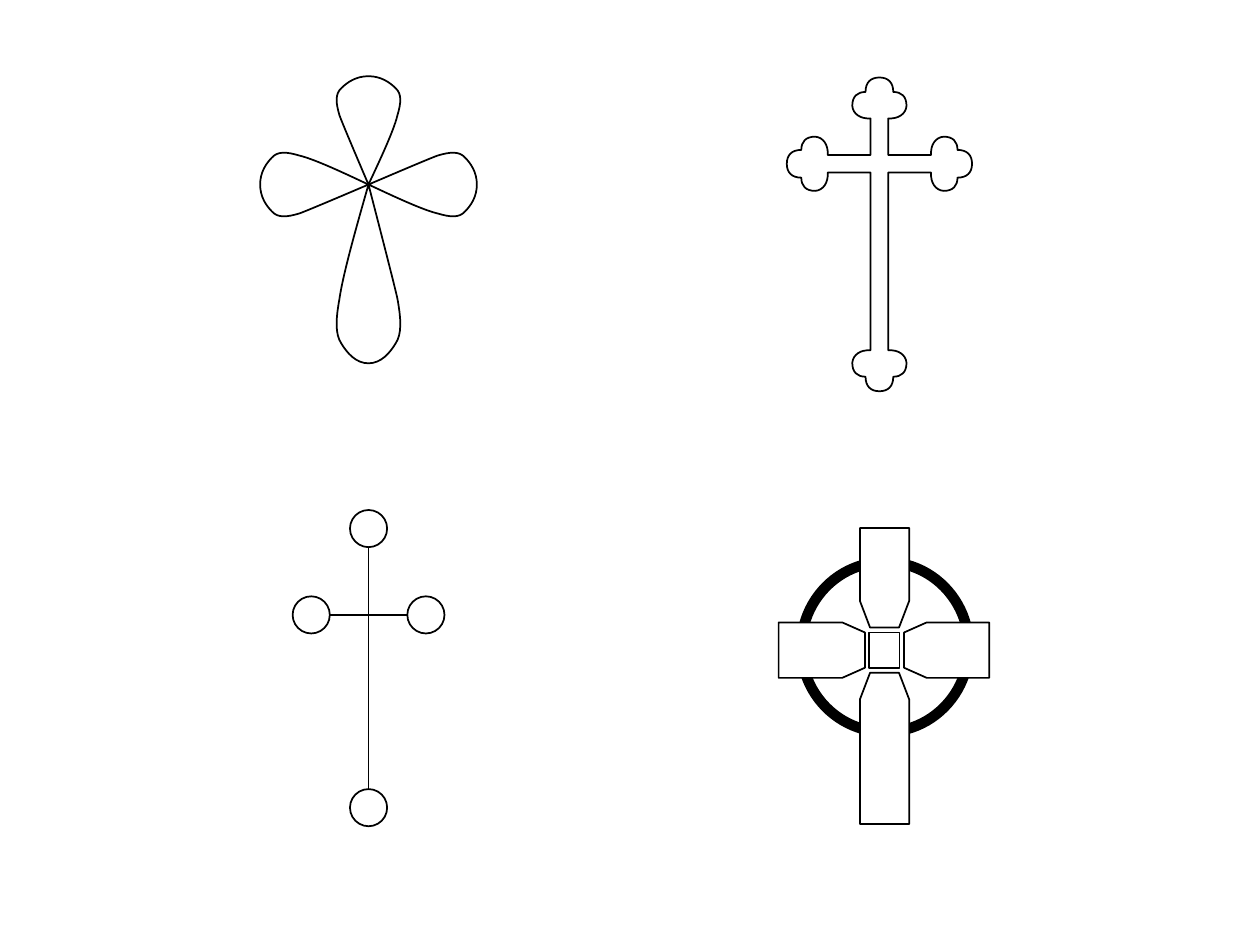
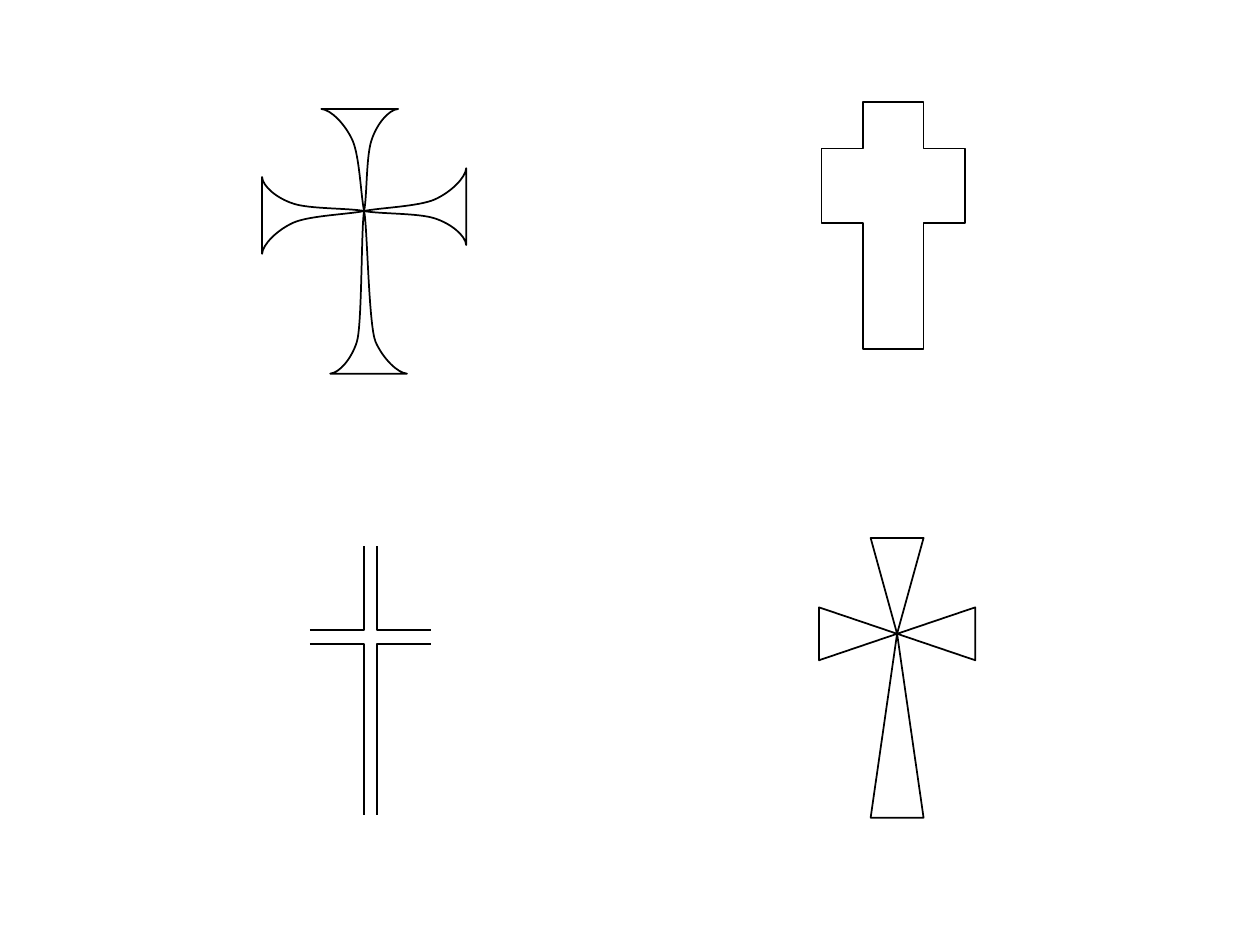
"""Build two slides of outlined crosses, each made of arms turned about a centre, on a 100 by 75 grid."""
from itertools import product

from pptx import Presentation
from pptx.dml.color import RGBColor
from pptx.enum.shapes import MSO_CONNECTOR, MSO_SHAPE
from pptx.oxml.ns import qn
from pptx.util import Inches, Pt

INK = RGBColor(0x00, 0x00, 0x00)
PAPER = RGBColor(0xFF, 0xFF, 0xFF)
OVAL = MSO_SHAPE.OVAL
SQUARE = MSO_SHAPE.RECTANGLE
STRAIGHT = MSO_CONNECTOR.STRAIGHT
COLUMNS, ROWS = 100, 75
UP, RIGHT, DOWN, LEFT = (0, -1), (1, 0), (0, 1), (-1, 0)
CLOCKWISE = (UP, RIGHT, DOWN, LEFT)


def mirrored(half):
    return [(-side, along) for side, along in half] + half[-2::-1]


def turned(centre, direction, profile):
    (x, y), (dx, dy) = centre, direction
    return [(x + along * dx - side * dy, y + along * dy + side * dx)
            for side, along in profile]


def shifted(profile, distance):
    return [(side, along + distance) for side, along in profile]


def straight_to(point):
    return [point] * 3


def petal(stretch=1):
    hub = (0, 0)
    cheek = [(2.3, 5.5), (2.6, 6.5), (2.65, 7.2), (2.15, 7.65)]
    crown = [(1.7, 8.1), (1, 8.6), (0, 8.6)]
    left_edge = [hub, hub, (-2.1, 4.9)]
    right_edge = [(2, 4.2), (0.7, 1.5), hub]
    profile = left_edge + mirrored(cheek + crown) + right_edge
    return [(side, along * stretch) for side, along in profile]


def flare(extension=0):
    length, lean, waist = 8.1, 0.35, 2
    rim_to_shoulder = [(3.05, length), (2.3, 8.05), (1.25, 6.9), (0.75, 5.6)]
    shoulder_to_hub = [(0.25, 4.3), (0.25, 1.2), (0, 0)]
    profile = []
    for side, along in mirrored(rim_to_shoulder + shoulder_to_hub):
        leaned = side - lean * (along / length) ** 2
        profile.append((leaned, along + extension if along > waist else along))
    return profile


def wedge(length, half_width=2.1):
    return [(0, 0), (half_width, length), (-half_width, length)]


def tapered(neck, width, inner, shoulder, outer):
    return mirrored([(0, outer), (width, outer), (width, shoulder), (neck, inner), (0, inner)])


class CrossSheet:
    """Holds the line style, the grid and the current slide."""

    def __init__(self):
        self.deck = Presentation()
        self.deck.slide_width, self.deck.slide_height = Inches(10), Inches(7.5)
        self.column = self.deck.slide_width / COLUMNS
        self.row = self.deck.slide_height / ROWS

    def new_slide(self):
        self.shapes = self.deck.slides.add_slide(self.deck.slide_layouts[6]).shapes

    def place(self, x, y):
        return round(x * self.column), round(y * self.row)

    def ink(self, shape, weight=1):
        shape.line.color.rgb = INK
        shape.line.width = Pt(weight)

    def dress(self, shape, filled, weight=1):
        shape.shadow.inherit = False
        if filled:
            shape.fill.solid()
            shape.fill.fore_color.rgb = PAPER
        else:
            shape.fill.background()
        self.ink(shape, weight)

    def centred(self, kind, centre, width, height, filled=True, weight=1):
        corner = self.place(centre[0] - width / 2, centre[1] - height / 2)
        shape = self.shapes.add_shape(kind, *corner, *self.place(width, height))
        self.dress(shape, filled, weight)

    def stroke(self, start, end):
        line = self.shapes.add_connector(STRAIGHT, *self.place(*start), *self.place(*end))
        properties = line.element.spPr
        self.ink(line)
        properties.append(properties.makeelement(qn("a:effectLst")))

    def outline(self, points, closed=True, filled=True, curved=False):
        corners = [self.place(*point) for point in points]
        builder = self.shapes.build_freeform(*corners[0])
        builder.add_line_segments(corners[1:], close=closed)
        shape = builder.convert_to_shape()
        if curved:
            self.bend(shape)
        self.dress(shape, filled)

    def bend(self, shape):
        steps = shape.element.xpath(".//a:path/a:lnTo")
        for first in range(0, len(steps) - len(steps) % 3, 3):
            curve = steps[first].makeelement(qn("a:cubicBezTo"))
            steps[first].addprevious(curve)
            for step in steps[first:first + 3]:
                curve.append(step[0])
                step.getparent().remove(step)

    def arms(self, centre, profiles, curved=False):
        for direction, profile in zip(CLOCKWISE, profiles):
            self.outline(turned(centre, direction, profile), curved=curved)


def trefoil_cross(sheet):
    centre, half_shaft = (69.8, 13), 0.7
    shaft_lengths = (3.6, 4.1, 14.8, 4.1)
    side_lobe = [(half_shaft, 0), (1.5, -0.05), (2.1, 0.35), (2.15, 1),
                 (2.15, 1.75), (1.75, 2.1), (1.1, 2.1)]
    end_lobe = [(1.1, 2.85), (0.7, 3.25), (0, 3.25)]
    bud = mirrored(side_lobe + end_lobe)
    crook = (half_shaft, half_shaft)

    contour = turned(centre, UP, [(-half_shaft, half_shaft)])
    for direction, length in zip(CLOCKWISE, shaft_lengths):
        neck, *lobes = shifted(bud, length)
        contour += turned(centre, direction, straight_to(neck) + lobes + straight_to(crook))
    sheet.outline(contour, filled=False, curved=True)


def petal_cross(sheet):
    short = petal()
    sheet.arms((29.25, 14.65), (short, short, petal(stretch=1.65), short), curved=True)


def budded_cross(sheet):
    centre, bud_size = (29.25, 48.8), 2.95
    reaches = (6.85, 4.55, 15.3, 4.55)
    bud_centres = []
    for direction, reach in zip(CLOCKWISE, reaches):
        rod_end, bud_centre = turned(centre, direction, [(0, reach - bud_size / 2), (0, reach)])
        sheet.stroke(centre, rod_end)
        bud_centres.append(bud_centre)
    for bud_centre in bud_centres:
        sheet.centred(OVAL, bud_centre, bud_size, bud_size)


def ringed_cross(sheet):
    centre = (70.2, 51.6)
    upright = {"neck": 1.15, "width": 1.95, "inner": 1.8, "shoulder": 3.9}
    crossbar = {"neck": 1.4, "width": 2.2, "inner": 1.55, "shoulder": 3.35}
    sheet.centred(OVAL, (70.25, 51.35), 13.3, 13.5, filled=False, weight=6)
    sheet.arms(centre, (tapered(**upright, outer=9.7), tapered(**crossbar, outer=8.3),
                        tapered(**upright, outer=13.8), tapered(**crossbar, outer=8.4)))
    sheet.centred(SQUARE, centre, 2.4, 2.8)


def open_cross(sheet):
    centre_x, centre_y = 29.4, 50.55
    half_gap_x, half_gap_y = 0.5, 0.55
    bar = 4.3
    posts = {-1: 6.7, 1: 13.6}
    for across, down in product((-1, 1), repeat=2):
        x, y = centre_x + half_gap_x * across, centre_y + half_gap_y * down
        sheet.outline([(x + bar * across, y), (x, y), (x, y + posts[down] * down)],
                      closed=False, filled=False)


def latin_cross(sheet):
    top_centre = (70.9, 8.1)
    post, bar = 2.4, 5.7
    bar_top, bar_bottom, foot = 3.7, 9.6, 19.6
    half = [(0, 0), (post, 0), (post, bar_top), (bar, bar_top),
            (bar, bar_bottom), (post, bar_bottom), (post, foot), (0, foot)]
    sheet.outline(turned(top_centre, DOWN, mirrored(half)))


def wedge_cross(sheet):
    sheet.arms((71.2, 50.3), [wedge(length) for length in (7.6, 6.2, 14.6, 6.2)])


def flared_cross(sheet):
    short = flare()
    sheet.arms((28.9, 16.75), (short, short, flare(extension=4.8), short), curved=True)


def main():
    sheet = CrossSheet()
    for crosses in ((trefoil_cross, petal_cross, budded_cross, ringed_cross),
                    (open_cross, latin_cross, wedge_cross, flared_cross)):
        sheet.new_slide()
        for draw_cross in crosses:
            draw_cross(sheet)
    sheet.deck.save("out.pptx")


if __name__ == "__main__":
    main()
